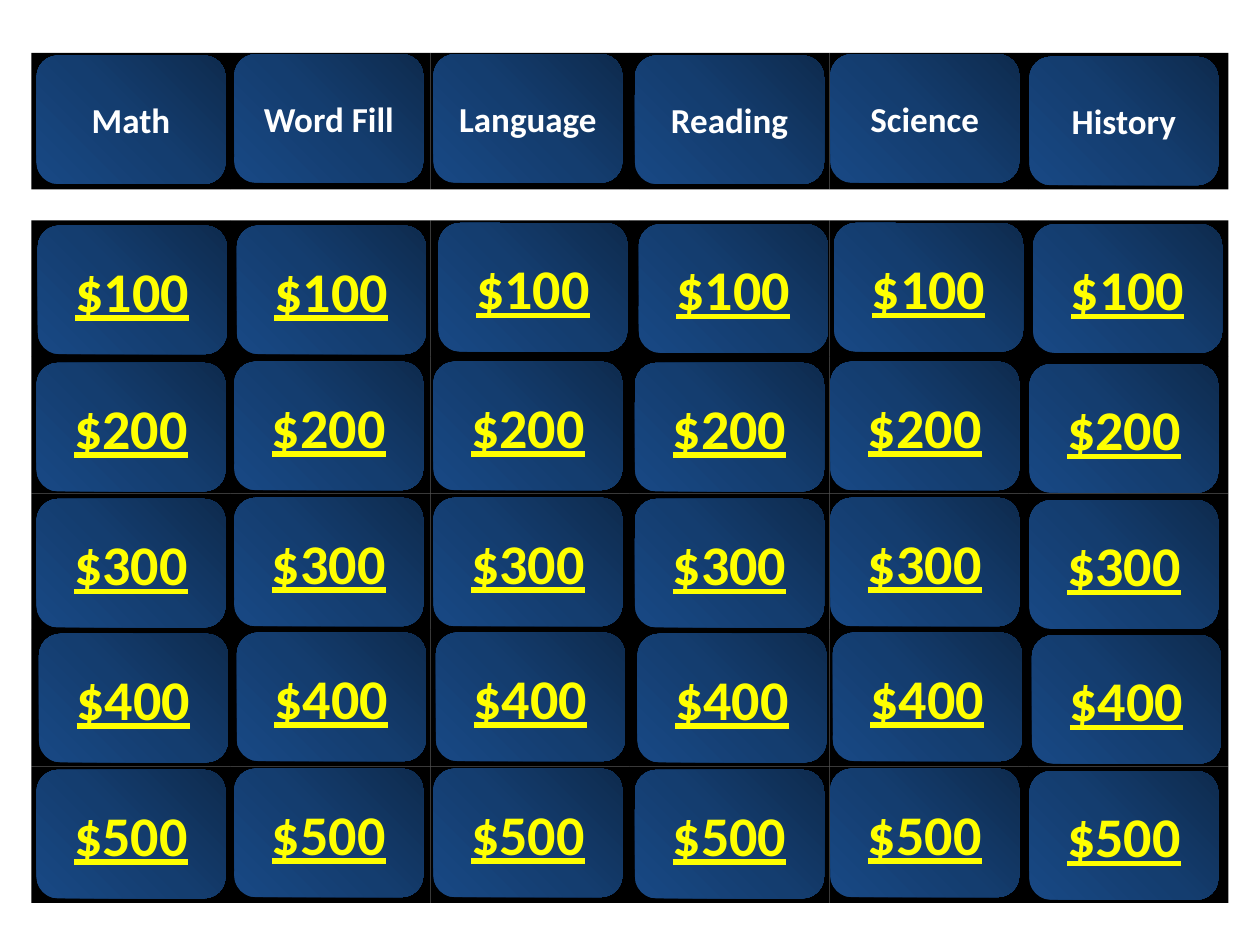
import pptx
from lxml import etree
from pptx.dml.color import RGBColor
from pptx.enum.shapes import MSO_SHAPE
from pptx.enum.text import MSO_ANCHOR, PP_ALIGN
from pptx.util import Inches, Pt

BLACK = RGBColor(0x00, 0x00, 0x00)
WHITE = RGBColor(0xFF, 0xFF, 0xFF)
YELLOW = RGBColor(0xFF, 0xFF, 0x00)
GRADIENT_STOPS = [
    (0, RGBColor(0x0E, 0x2B, 0x4E)),
    (50, RGBColor(0x14, 0x3D, 0x6F)),
    (100, RGBColor(0x18, 0x48, 0x84)),
]
DRAWING_NS = "http://schemas.openxmlformats.org/drawingml/2006/main"

CELL_WIDTH = 9.5 / 6
CELL_HEIGHT = 6.5 / 6
BOARD_LEFT = 0.25
HEADER_TOP = 0.42
GRID_TOP = 1.75
CATEGORIES = ["Math", "Word Fill", "Language", "Reading", "Science", "History"]

# Cards sit slightly off the grid, so each row and column has its own place.
CARD_LEFTS = [0.29, 1.86, 3.44, 5.04, 6.59, 8.17]
FIRST_ROW_LEFTS = [0.3, 1.88, 3.48, 5.07, 6.62, 8.2]
FOURTH_ROW_LEFTS = [left + 0.02 for left in CARD_LEFTS]
COLUMN_DROPS = [0.01, 0, 0, 0.01, 0, 0.02]
FIRST_ROW_DROPS = [0.02, 0.02, 0, 0.01, 0, 0.01]
VALUE_ROWS = [
    ("$100", 1.77, FIRST_ROW_LEFTS, FIRST_ROW_DROPS),
    ("$200", 2.87, CARD_LEFTS, COLUMN_DROPS),
    ("$300", 3.95, CARD_LEFTS, COLUMN_DROPS),
    ("$400", 5.02, FOURTH_ROW_LEFTS, COLUMN_DROPS),
    ("$500", 6.1, CARD_LEFTS, COLUMN_DROPS),
]


def set_corner_gradient(shape):
    """Fill the shape with a radial gradient centred on its top right corner."""
    gradient = etree.Element(f"{{{DRAWING_NS}}}gradFill", rotWithShape="1")
    stops = etree.SubElement(gradient, f"{{{DRAWING_NS}}}gsLst")
    for percent, color in GRADIENT_STOPS:
        stop = etree.SubElement(stops, f"{{{DRAWING_NS}}}gs", pos=str(percent * 1000))
        etree.SubElement(stop, f"{{{DRAWING_NS}}}srgbClr", val=str(color))
    circle = etree.SubElement(gradient, f"{{{DRAWING_NS}}}path")
    circle.set("path", "circle")
    etree.SubElement(circle, f"{{{DRAWING_NS}}}fillToRect", l="100000", b="100000")
    shape._element.spPr.find(f"{{{DRAWING_NS}}}prstGeom").addnext(gradient)


def add_card(left, top, text, size, color, underline):
    card = page.shapes.add_shape(
        MSO_SHAPE.ROUNDED_RECTANGLE, Inches(left), Inches(top), Inches(1.5), Inches(1.02)
    )
    card.shadow.inherit = False
    card.line.fill.background()
    set_corner_gradient(card)
    card.text_frame.vertical_anchor = MSO_ANCHOR.MIDDLE
    para = card.text_frame.paragraphs[0]
    para.text = text
    para.alignment = PP_ALIGN.CENTER
    para.font.name = "Calibri"
    para.font.size = Pt(size)
    para.font.bold = True
    para.font.underline = underline
    para.font.color.rgb = color


deck = pptx.Presentation()
deck.slide_width = Inches(10)
deck.slide_height = Inches(7.5)
page = deck.slides.add_slide(deck.slide_layouts[6])

# Black board: one header row and five value rows
cell_tops = [HEADER_TOP] + [GRID_TOP + row * CELL_HEIGHT for row in range(5)]
for top in cell_tops:
    for column in range(6):
        cell = page.shapes.add_shape(
            MSO_SHAPE.RECTANGLE,
            Inches(BOARD_LEFT + column * CELL_WIDTH), Inches(top),
            Inches(CELL_WIDTH), Inches(CELL_HEIGHT),
        )
        cell.shadow.inherit = False
        cell.fill.solid()
        cell.fill.fore_color.rgb = BLACK
        cell.line.fill.background()

# Category cards
for category, left, drop in zip(CATEGORIES, CARD_LEFTS, COLUMN_DROPS):
    add_card(left, 0.43 + drop, category, 20, WHITE, False)

# Value cards
for value, top, lefts, drops in VALUE_ROWS:
    for left, drop in zip(lefts, drops):
        add_card(left, top + drop, value, 32, YELLOW, True)

deck.save("out.pptx")
